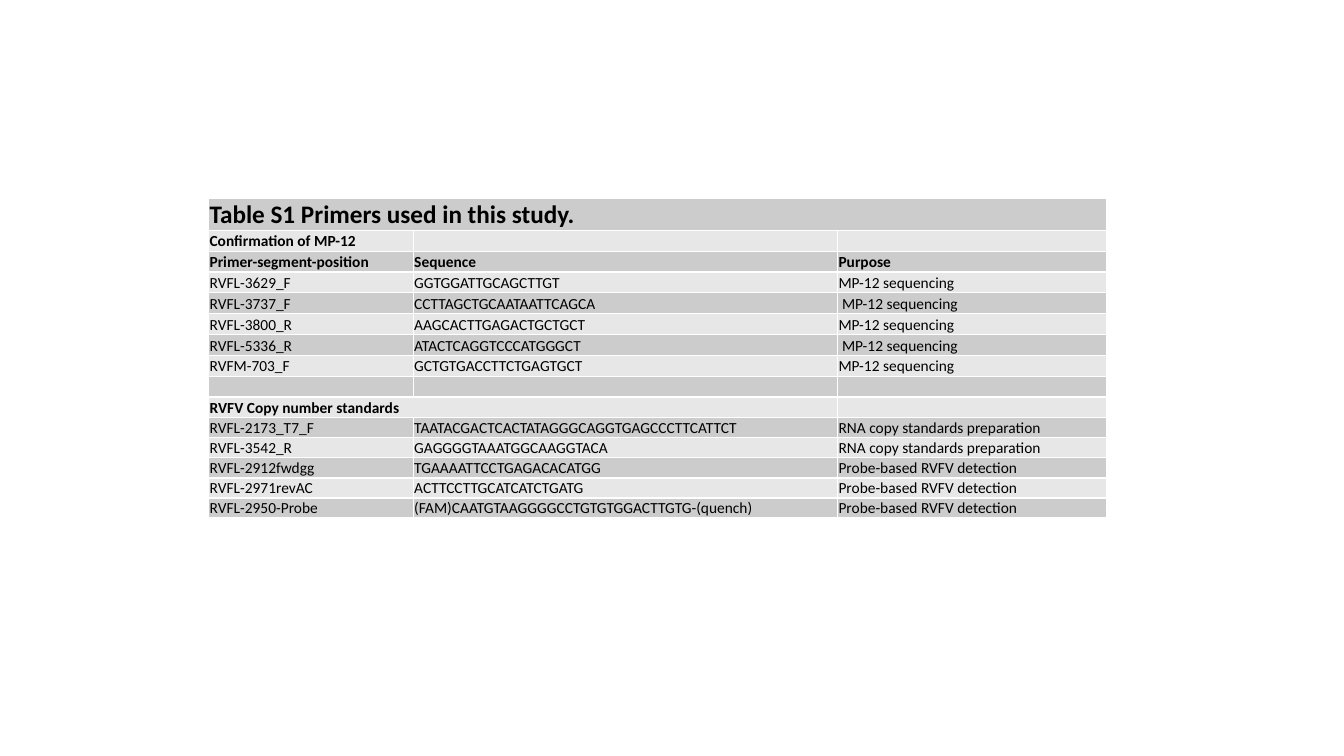
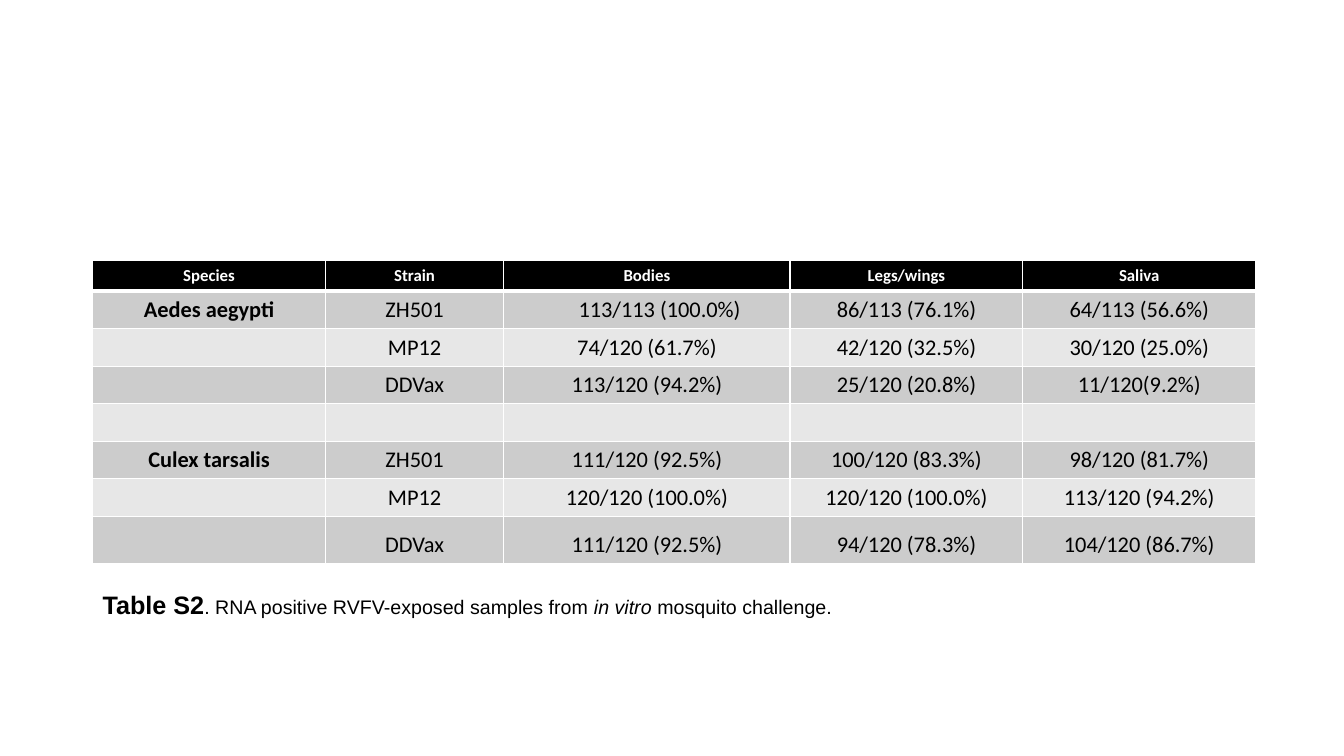
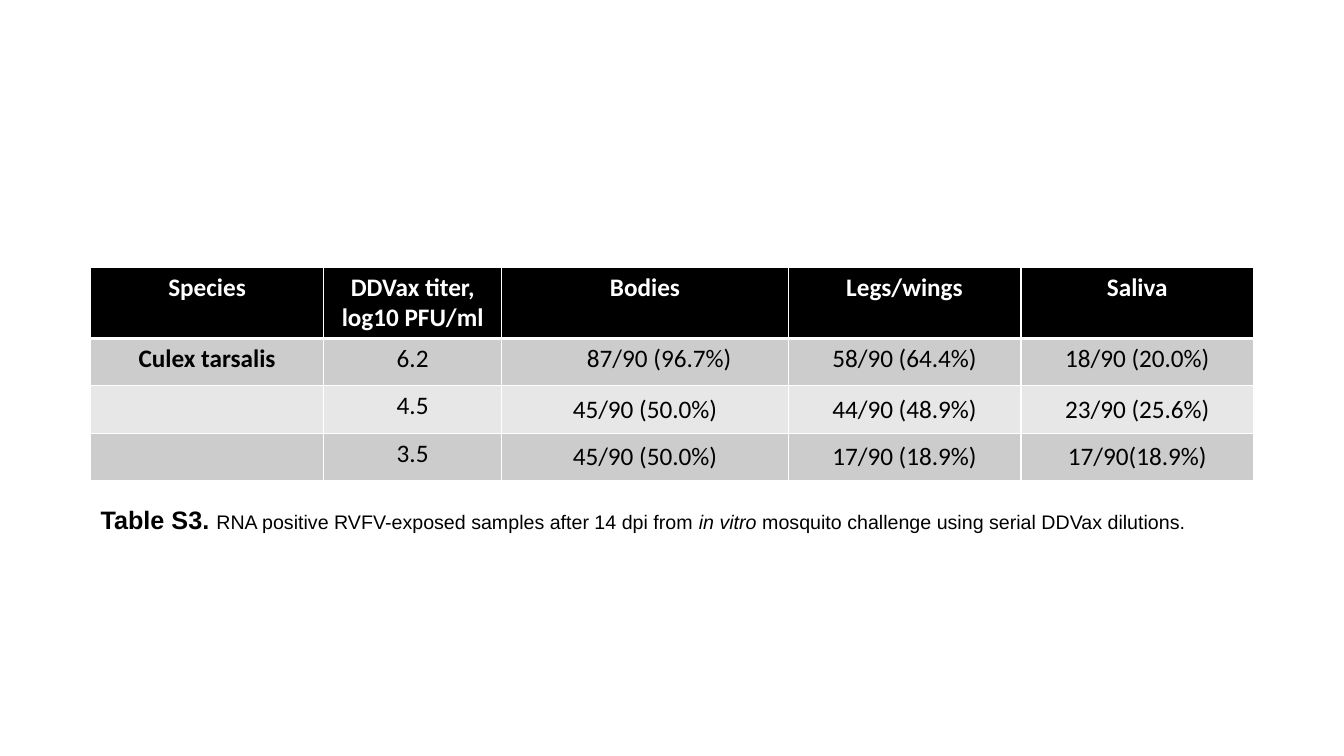
from lxml import etree
from pptx import Presentation
from pptx.dml.color import RGBColor
from pptx.enum.text import MSO_ANCHOR, PP_ALIGN
from pptx.oxml.ns import qn
from pptx.util import Pt

TOP, MIDDLE, BOTTOM = MSO_ANCHOR.TOP, MSO_ANCHOR.MIDDLE, MSO_ANCHOR.BOTTOM
LEFT, CENTER = PP_ALIGN.LEFT, PP_ALIGN.CENTER

BLACK, WHITE = "000000", "FFFFFF"
BANDS = ("E7E7E7", "CCCCCC")
TABLE_FONT, CAPTION_FONT = "Calibri", "Arial"
RESULT_COLS = (166.3, 127.4, 204.5, 166.3, 166.3)
CELL_MARGINS = (7.2, 3.6, 7.2, 3.6)
PRIMER_MARGINS = (0.72, 0.72, 0.72, 0)

PRIMER_ROWS = [
    ("Table S1 Primers used in this study.", "", ""),
    ("Confirmation of MP-12", "", ""),
    ("Primer-segment-position", "Sequence", "Purpose"),
    ("RVFL-3629_F", "GGTGGATTGCAGCTTGT", "MP-12 sequencing"),
    ("RVFL-3737_F", "CCTTAGCTGCAATAATTCAGCA", " MP-12 sequencing"),
    ("RVFL-3800_R", "AAGCACTTGAGACTGCTGCT", "MP-12 sequencing"),
    ("RVFL-5336_R", "ATACTCAGGTCCCATGGGCT", " MP-12 sequencing"),
    ("RVFM-703_F", "GCTGTGACCTTCTGAGTGCT", "MP-12 sequencing"),
    ("", "", ""),
    ("RVFV Copy number standards", "", ""),
    ("RVFL-2173_T7_F", "TAATACGACTCACTATAGGGCAGGTGAGCCCTTCATTCT", "RNA copy standards preparation"),
    ("RVFL-3542_R", "GAGGGGTAAATGGCAAGGTACA", "RNA copy standards preparation"),
    ("RVFL-2912fwdgg", "TGAAAATTCCTGAGACACATGG", "Probe-based RVFV detection"),
    ("RVFL-2971revAC", "ACTTCCTTGCATCATCTGATG", "Probe-based RVFV detection"),
    ("RVFL-2950-Probe", "(FAM)CAATGTAAGGGGCCTGTGTGGACTTGTG-(quench)", "Probe-based RVFV detection"),
]
STRAIN_ROWS = [
    ("Species", "Strain", "Bodies", "Legs/wings", "Saliva"),
    ("Aedes aegypti", "ZH501", "113/113 (100.0%)", "86/113 (76.1%)", "64/113 (56.6%)"),
    ("", "MP12", "74/120 (61.7%)", "42/120 (32.5%)", "30/120 (25.0%)"),
    ("", "DDVax", "113/120 (94.2%)", "25/120 (20.8%)", "11/120(9.2%)"),
    ("", "", "", "", ""),
    ("Culex tarsalis", "ZH501", "111/120 (92.5%)", "100/120 (83.3%)", "98/120 (81.7%)"),
    ("", "MP12", "120/120 (100.0%)", "120/120 (100.0%)", "113/120 (94.2%)"),
    ("", "DDVax", "111/120 (92.5%)", "94/120 (78.3%)", "104/120 (86.7%)"),
]
TITER_ROWS = [
    ("Species", "DDVax titer, log10 PFU/ml", "Bodies", "Legs/wings", "Saliva"),
    ("Culex tarsalis", "6.2", "87/90 (96.7%)", "58/90 (64.4%)", "18/90 (20.0%)"),
    ("", "4.5", "45/90 (50.0%)", "44/90 (48.9%)", "23/90 (25.6%)"),
    ("", "3.5", "45/90 (50.0%)", "17/90 (18.9%)", "17/90(18.9%)"),
]


def rgb(value):
    return RGBColor.from_string(value)


def add_run(p, text, color=BLACK, **font):
    r = p.add_run()
    r.text = text
    for name, value in font.items():
        setattr(r.font, name, value)
    r.font.color.rgb = rgb(color)


def set_borders(cell, top, bottom):
    tcPr = cell._tc.get_or_add_tcPr()
    for tag, width in (("lnL", 1), ("lnR", 1), ("lnT", top), ("lnB", bottom)):
        ln = etree.SubElement(tcPr, qn("a:" + tag), w=str(Pt(width)))
        fill = etree.SubElement(ln, qn("a:solidFill"))
        etree.SubElement(fill, qn("a:srgbClr"), val=WHITE)


def fill_cell(cell, text, fill, size, bold=False, color=BLACK, align=LEFT, anchor=TOP,
              margins=CELL_MARGINS, top=1, bottom=1):
    set_borders(cell, top, bottom)
    cell.fill.solid()
    cell.fill.fore_color.rgb = rgb(fill)
    cell.vertical_anchor = anchor
    for side, margin in zip(("left", "top", "right", "bottom"), margins):
        setattr(cell, "margin_" + side, Pt(margin))
    p = cell.text_frame.paragraphs[0]
    p.alignment = align
    if text:
        add_run(p, text, color, name=TABLE_FONT, size=Pt(size), bold=bold)
    else:
        etree.SubElement(p._p, qn("a:endParaRPr"), sz=str(size * 100))


def add_grid(s, x, y, cols, heights, rows, cell_format):
    frame = s.shapes.add_table(len(rows), len(cols), Pt(x), Pt(y), Pt(sum(cols)), Pt(sum(heights)))
    table = frame.table
    table.first_row = table.horz_banding = False
    for col, width in zip(table.columns, cols):
        col.width = Pt(width)
    for i, (row, height) in enumerate(zip(rows, heights)):
        table.rows[i].height = Pt(height)
        for j, text in enumerate(row):
            fill_cell(table.cell(i, j), text, **cell_format(i, j))
    return table


def primer_slide(s, x, y):
    def cell_format(i, j):
        return dict(fill=BANDS[(i + 1) % 2], size=11 if i else 18, bold=i in (0, 1, 2, 9),
                    anchor=BOTTOM, margins=PRIMER_MARGINS)

    heights = [22.5] + [14.9] * 9 + [14.3] * 5
    table = add_grid(s, x, y, (146.2, 303.1, 192.2), heights, PRIMER_ROWS, cell_format)
    for row, last in ((0, 2), (9, 1)):
        table.cell(row, 0).merge(table.cell(row, last))


def result_slide(s, x, y, rows, heights, head_size, size, anchor_of, caption, caption_y, caption_w):
    def cell_format(i, j):
        if i == 0:
            return dict(fill=BLACK, size=head_size, bold=True, color=WHITE, align=CENTER, bottom=3)
        indent = 1.13 * size if (i, j) == (1, 2) else 0
        return dict(fill=BANDS[i % 2], size=size, bold=j == 0, align=CENTER, anchor=anchor_of(i, j),
                    margins=(CELL_MARGINS[0] + indent, *CELL_MARGINS[1:]), top=3 if i == 1 else 1)

    add_grid(s, x, y, RESULT_COLS, heights, rows, cell_format)
    add_caption(s, x, caption_y, caption_w, *caption)


def add_caption(s, x, y, w, label, before, after):
    tf = s.shapes.add_textbox(Pt(x), Pt(y), Pt(w), Pt(28.8)).text_frame
    tf.word_wrap = True
    p = tf.paragraphs[0]
    add_run(p, label, name=CAPTION_FONT, size=Pt(18), bold=True)
    for text, italic in ((before, False), ("in vitro ", True), (after, False)):
        add_run(p, text, name=CAPTION_FONT, size=Pt(14), bold=False, italic=italic)


def main():
    prs = Presentation()
    prs.slide_width, prs.slide_height = Pt(960), Pt(540)
    primers, strains, titers = (prs.slides.add_slide(prs.slide_layouts[6]) for _ in range(3))
    primer_slide(primers, 149, 141.8)
    result_slide(
        strains, 66.2, 186.2, STRAIN_ROWS, [21.6] + [26.8] * 6 + [33.8], 12, 16,
        lambda i, j: BOTTOM,
        ("Table S2", ". RNA positive RVFV-exposed samples from ", "mosquito challenge."), 417.6, 696.2)
    result_slide(
        titers, 64.8, 190.8, TITER_ROWS, [51] + [33.8] * 3, 18, 18,
        lambda i, j: MIDDLE if i > 1 and j > 1 else TOP,
        ("Table S3. ", "RNA positive RVFV-exposed samples after 14 dpi from ",
         "mosquito challenge using serial DDVax dilutions."), 356.4, 801.4)
    prs.save("out.pptx")


if __name__ == "__main__":
    main()
